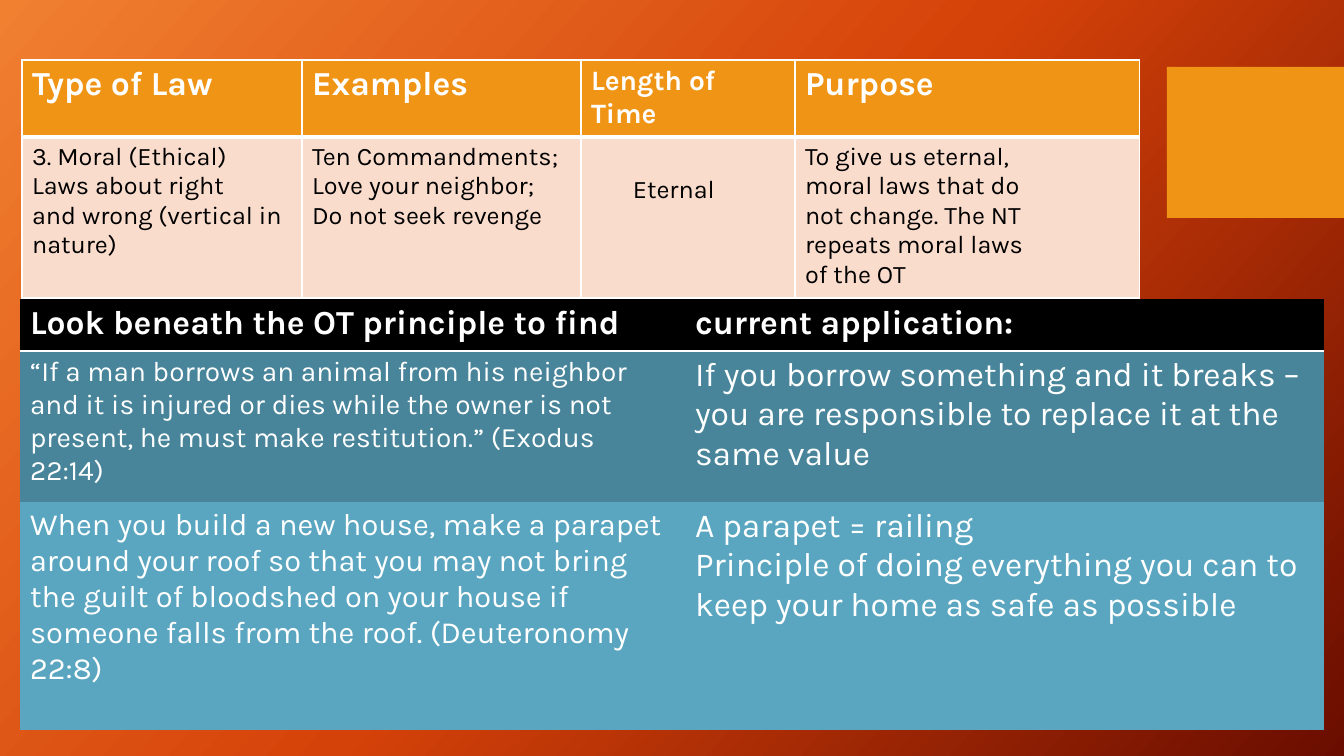
"""Build a slide on moral law and the present-day use of Old Testament principles."""
from copy import deepcopy

from lxml import etree
from pptx import Presentation
from pptx.dml.color import RGBColor
from pptx.enum.shapes import MSO_SHAPE
from pptx.oxml.ns import qn
from pptx.util import Emu, Pt

RECTANGLE = MSO_SHAPE.RECTANGLE
WHITE = RGBColor(0xFF, 0xFF, 0xFF)
BLACK = RGBColor(0, 0, 0)
ORANGE = RGBColor(0xF0, 0x94, 0x15)
PEACH = RGBColor(0xF9, 0xDC, 0xCC)
TEAL = RGBColor(0x48, 0x85, 0x9A)
SKY = RGBColor(0x5A, 0xA6, 0xC0)
BACKGROUND = [RGBColor(0xF1, 0x80, 0x31), RGBColor(0xD5, 0x42, 0x09), RGBColor(0x6A, 0x0D, 0x00)]
NO_STYLE = "{2D5ABB26-0587-4C30-8999-92F81FD0307C}"
FONT = "Karla"


def px(length):
    return Emu(round(length * 914400 / 100.8))


def add_law_table(slide, left, top, widths, rows):
    heights = [row["height"] for row in rows]
    frame = slide.shapes.add_table(len(rows), len(widths), px(left), px(top),
                                   px(sum(widths)), px(sum(heights)))
    table = frame.table
    table._tbl.tblPr.find(qn("a:tableStyleId")).text = NO_STYLE
    for column, width in zip(table.columns, widths):
        column.width = px(width)
    for index, row in enumerate(rows):
        table.rows[index].height = px(row["height"])
        for cell, (text, size) in zip(table.rows[index].cells, row["cells"]):
            properties = cell._tc.get_or_add_tcPr()
            for side in ("L", "R", "T", "B"):
                points = row["borders"].get(side, 0)
                line = etree.SubElement(properties, qn(f"a:ln{side}"), w=str(Pt(points)))
                if points:
                    solid = etree.SubElement(line, qn("a:solidFill"))
                    etree.SubElement(solid, qn("a:srgbClr"), val=str(WHITE))
                else:
                    etree.SubElement(line, qn("a:noFill"))
            cell.fill.solid()
            cell.fill.fore_color.rgb = row["fill"]
            cell.text = text
            for paragraph in cell.text_frame.paragraphs:
                paragraph.font.name = FONT
                paragraph.font.size = Pt(size)
                paragraph.font.bold = index == 0
                paragraph.font.color.rgb = row["color"]
    return table


presentation = Presentation()
presentation.slide_width = px(1344)
presentation.slide_height = px(756)
slide = presentation.slides.add_slide(presentation.slide_layouts[6])

background = slide.background.fill
background.gradient()
background.gradient_angle = 318
first_stop = slide.element.find(".//" + qn("a:gs"))
first_stop.addnext(deepcopy(first_stop))
for index, (stop, color) in enumerate(zip(background.gradient_stops, BACKGROUND)):
    stop.position = index / 2
    stop.color.rgb = color

accent = slide.shapes.add_shape(RECTANGLE, px(1167), px(67), px(177), px(151))
accent.shadow.inherit = False
accent.fill.solid()
accent.fill.fore_color.rgb = ORANGE
accent.line.fill.background()

law_rows = [
    {"height": 77, "fill": ORANGE, "color": WHITE, "borders": {"L": 1, "R": 1, "T": 1, "B": 3},
     "cells": [("Type of Law", 24), ("Examples", 24), ("Length of Time", 20), ("Purpose", 24)]},
    {"height": 161, "fill": PEACH, "color": BLACK, "borders": {"L": 1, "R": 1, "T": 3, "B": 1},
     "cells": [
         ("3. Moral (Ethical)\nLaws about right\nand wrong (vertical in nature)", 18),
         ("Ten Commandments;\nLove your neighbor;\nDo not seek revenge", 18),
         ("Eternal", 18),
         ("To give us eternal,\nmoral laws that do\nnot change. The NT\n"
          "repeats moral laws\nof the OT", 18)]},
]
law_table = add_law_table(slide, 22, 60, [280, 279, 214, 345], law_rows)
eternal = law_table.cell(1, 2)
eternal.margin_left = px(52)
eternal.margin_top = px(38)

application_rows = [
    {"height": 52, "fill": BLACK, "color": WHITE, "borders": {"B": 2},
     "cells": [("Look beneath the OT principle to find", 24), ("current application:", 24)]},
    {"height": 151, "fill": TEAL, "color": WHITE, "borders": {"T": 2},
     "cells": [
         ("“If a man borrows an animal from his neighbor and it is injured or dies while "
          "the owner is not present, he must make restitution.” (Exodus 22:14)", 20),
         ("If you borrow something and it breaks – you are responsible to replace it "
          "at the same value", 24)]},
    {"height": 228, "fill": SKY, "color": WHITE, "borders": {},
     "cells": [
         ("When you build a new house, make a parapet around your roof so that you may not "
          "bring the guilt of bloodshed on your house if someone falls from the roof. "
          "(Deuteronomy 22:8)", 22),
         ("A parapet = railing\nPrinciple of doing everything you can to keep your home "
          "as safe as possible", 24)]},
]
add_law_table(slide, 20, 299, [665, 639], application_rows)

presentation.save("out.pptx")
